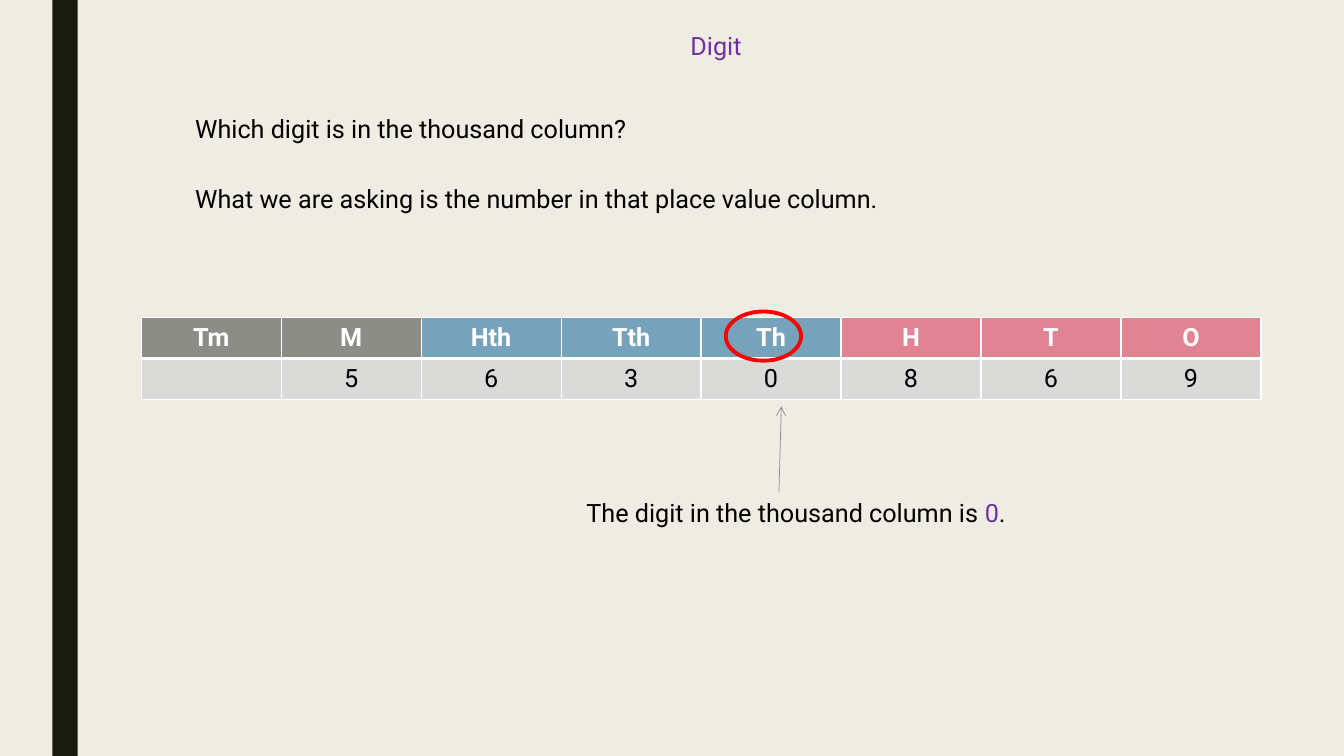
from dataclasses import dataclass

from lxml.etree import SubElement
from pptx import Presentation
from pptx.dml.color import RGBColor
from pptx.enum.shapes import MSO_CONNECTOR, MSO_SHAPE
from pptx.enum.text import MSO_ANCHOR, MSO_AUTO_SIZE, PP_ALIGN
from pptx.oxml.ns import qn
from pptx.slide import Slide
from pptx.table import _Cell
from pptx.text.text import TextFrame
from pptx.util import Cm, Pt


@dataclass(frozen=True)
class Theme:
    font: str = "Roboto"
    size: int = 18
    paper: str = "EFEDE3"
    bar: str = "191B0E"
    ink: str = "000000"
    accent: str = "7030A0"
    white: str = "FFFFFF"
    grey: str = "8C8D86"
    blue: str = "77A2BB"
    pink: str = "E28394"
    pale: str = "DADBD9"
    ring: str = "FF0000"


THEME = Theme()


@dataclass(frozen=True)
class Place:
    """One place value column: heading, digit and heading colour."""
    name: str
    digit: str
    fill: str


@dataclass(frozen=True)
class Note:
    """A line of text made of (wording, colour) pieces."""
    left: float
    top: float
    width: float
    pieces: tuple[tuple[str, str], ...]


PLACES = [
    Place("Tm", "", THEME.grey),
    Place("M", "5", THEME.grey),
    Place("Hth", "6", THEME.blue),
    Place("Tth", "3", THEME.blue),
    Place("Th", "0", THEME.blue),
    Place("H", "8", THEME.pink),
    Place("T", "6", THEME.pink),
    Place("O", "9", THEME.pink),
]

NOTES = [
    Note(4.67, 2.74, 11.46, (("Which digit is in the thousand column?", THEME.ink),)),
    Note(4.67, 4.5, 18.14,
         (("What we are asking is the number in that place value column.", THEME.ink),)),
    Note(14.53, 12.4, 11.3, (("The digit in the thousand column is ", THEME.ink),
                             ("0", THEME.accent), (".", THEME.ink))),
]


def rgb(code: str) -> RGBColor:
    return RGBColor.from_string(code)


def write(frame: TextFrame, text: str, *, color: str = THEME.ink,
          bold: bool = False, align: PP_ALIGN = PP_ALIGN.LEFT) -> None:
    """Append a formatted run to the frame's first paragraph."""
    para = frame.paragraphs[0]
    para.alignment = align
    run = para.add_run()
    run.text = text
    font = run.font
    font.name, font.size, font.bold = THEME.font, Pt(THEME.size), bold
    font.color.rgb = rgb(color)


def add_bar(slide: Slide) -> None:
    bar = slide.shapes.add_shape(MSO_SHAPE.RECTANGLE, Cm(1.32), 0, Cm(0.64), Cm(19.05))
    bar.shadow.inherit = False
    bar.fill.solid()
    bar.fill.fore_color.rgb = rgb(THEME.bar)
    bar.line.fill.background()


def add_title(slide: Slide, text: str) -> None:
    title = slide.shapes.title
    title.left, title.top, title.width, title.height = Cm(5.28), Cm(0.64), Cm(25.53), Cm(1.02)
    frame = title.text_frame
    frame.vertical_anchor = MSO_ANCHOR.TOP
    frame.auto_size = MSO_AUTO_SIZE.SHAPE_TO_FIT_TEXT
    write(frame, text, color=THEME.accent, align=PP_ALIGN.CENTER)


def add_note(slide: Slide, note: Note) -> None:
    box = slide.shapes.add_textbox(Cm(note.left), Cm(note.top), Cm(note.width), Cm(1.02))
    frame = box.text_frame
    frame.word_wrap = False
    frame.auto_size = MSO_AUTO_SIZE.SHAPE_TO_FIT_TEXT
    for text, color in note.pieces:
        write(frame, text, color=color)


def edge(cell: _Cell, top: float, bottom: float) -> None:
    """Give a cell white borders; the sides are 1 pt wide."""
    props = cell._tc.get_or_add_tcPr()
    for tag, width in (("lnL", 1), ("lnR", 1), ("lnT", top), ("lnB", bottom)):
        line = SubElement(props, qn(f"a:{tag}"), w=str(Pt(width)))
        fill = SubElement(line, qn("a:solidFill"))
        SubElement(fill, qn("a:srgbClr"), val=THEME.white)


def fill_cell(cell: _Cell, text: str, fill: str, head: bool) -> None:
    edge(cell, *((1, 3) if head else (3, 1)))
    cell.fill.solid()
    cell.fill.fore_color.rgb = rgb(fill)
    cell.vertical_anchor = MSO_ANCHOR.MIDDLE
    if text:
        write(cell.text_frame, text, color=THEME.white if head else THEME.ink,
              bold=head, align=PP_ALIGN.CENTER)


def add_grid(slide: Slide, places: list[Place]) -> None:
    grid = slide.shapes.add_table(2, len(places), Cm(3.56), Cm(8.0),
                                  Cm(28.22), Cm(2.06)).table
    grid.horz_banding = False
    for col, place in enumerate(places):
        fill_cell(grid.cell(0, col), place.name, place.fill, True)
        fill_cell(grid.cell(1, col), place.digit, THEME.pale, False)


def add_arrow(slide: Slide) -> None:
    arrow = slide.shapes.add_connector(MSO_CONNECTOR.STRAIGHT, Cm(19.63), Cm(12.4),
                                       Cm(19.69), Cm(10.24))
    arrow.line.color.rgb = rgb(THEME.grey)
    arrow.line.width = Pt(0.5)
    SubElement(arrow.line._get_or_add_ln(), qn("a:tailEnd"), type="arrow")
    SubElement(arrow._element.spPr, qn("a:effectLst"))


def add_ring(slide: Slide) -> None:
    ring = slide.shapes.add_shape(MSO_SHAPE.OVAL, Cm(18.29), Cm(7.85), Cm(1.9), Cm(1.24))
    ring.shadow.inherit = False
    ring.fill.background()
    ring.line.color.rgb = rgb(THEME.ring)
    ring.line.width = Pt(2.75)


def main() -> None:
    deck = Presentation()
    deck.slide_width, deck.slide_height = Cm(33.87), Cm(19.05)
    slide = deck.slides.add_slide(deck.slide_layouts[5])
    slide.background.fill.solid()
    slide.background.fill.fore_color.rgb = rgb(THEME.paper)
    add_bar(slide)
    add_title(slide, "Digit")
    add_grid(slide, PLACES)
    for note in NOTES:
        add_note(slide, note)
    add_arrow(slide)
    add_ring(slide)
    deck.save("out.pptx")


if __name__ == "__main__":
    main()
